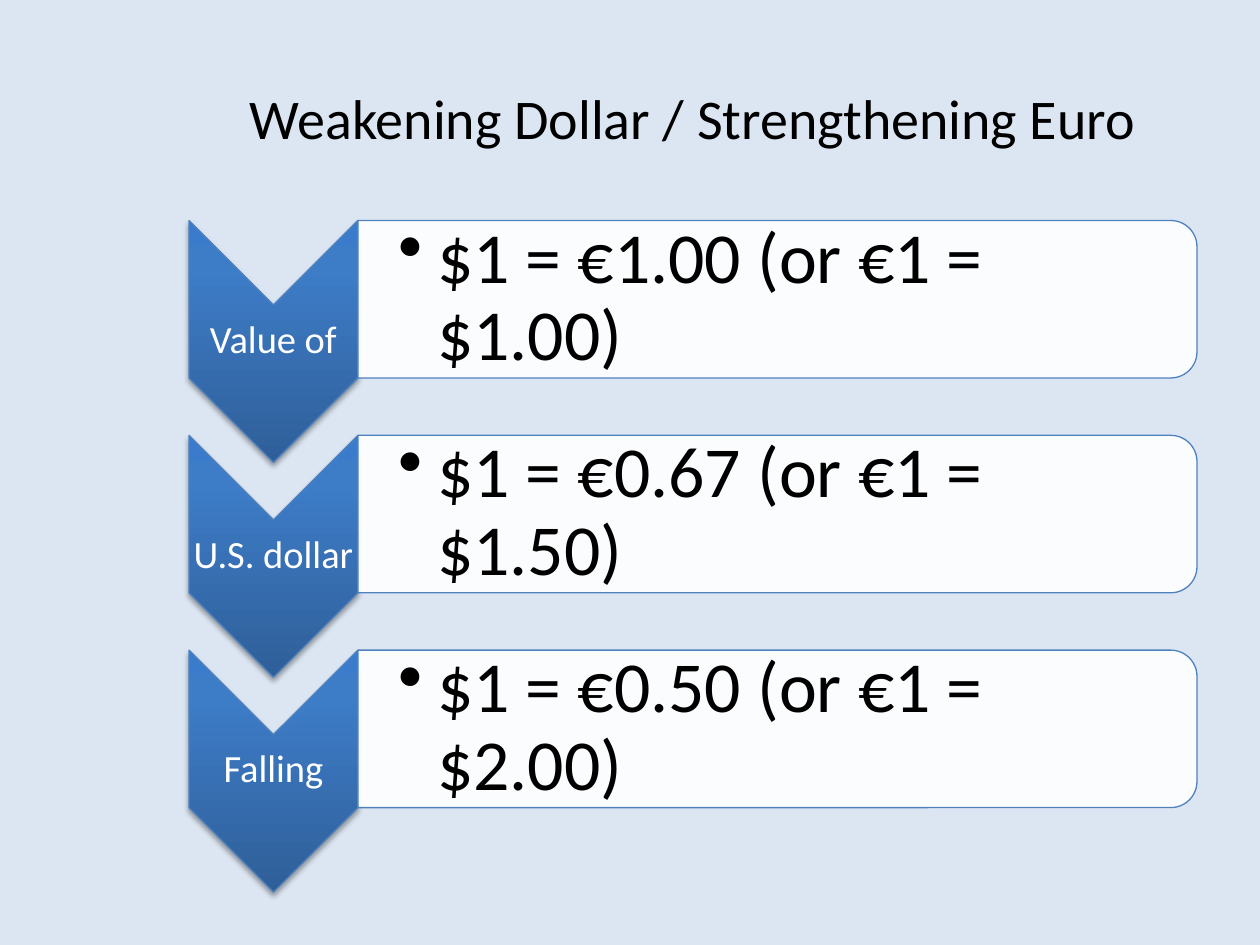
"""Build a slide that shows the dollar weakening against the euro in three steps."""
from dataclasses import dataclass

from pptx import Presentation
from pptx.dml.color import RGBColor
from pptx.enum.shapes import MSO_SHAPE as Kind
from pptx.enum.text import MSO_ANCHOR as Anchor, PP_ALIGN as Align
from pptx.oxml import parse_xml
from pptx.oxml.ns import nsdecls, qn
from pptx.util import Inches, Pt

FONT = "Calibri"
BLUE = "4F81BD"
STOPS = ((0, "2F5F99"), (80, "3D7CC7"), (100, "3A7CCB"))
TOP = 1.75
PITCH = 3.41 / 2
LEFT, MID, RIGHT = 1.5, 2.84, 9.5
TIP, BAR = 1.92, 1.25


@dataclass
class Step:
    label: str
    rate: str


@dataclass
class Box:
    left: float
    top: float
    width: float
    height: float

    def lengths(self):
        return [Inches(n) for n in (self.left, self.top, self.width, self.height)]

    def turned(self):
        shift = (self.width - self.height) / 2
        return Box(self.left + shift, self.top - shift, self.height, self.width)


STEPS = [
    Step("Value of", "$1 = €1.00 (or €1 = $1.00)"),
    Step("U.S. dollar", "$1 = €0.67 (or €1 = $1.50)"),
    Step("Falling", "$1 = €0.50 (or €1 = $2.00)"),
]


def color(code: str) -> RGBColor:
    return RGBColor.from_string(code)


def add_text(slide, box: Box, text: str, size: float, code: str, pads=None):
    area = slide.shapes.add_textbox(*box.lengths())
    frame = area.text_frame
    frame.word_wrap = True
    frame.vertical_anchor = Anchor.MIDDLE
    if pads:
        (frame.margin_left, frame.margin_top,
         frame.margin_right, frame.margin_bottom) = [Inches(n) for n in pads]
    frame.text = text
    para = frame.paragraphs[0]
    para.alignment = Align.CENTER
    font = para.runs[0].font
    font.name, font.size = FONT, Pt(size)
    font.color.rgb = color(code)
    return para


def add_turned(slide, kind: Kind, box: Box):
    shape = slide.shapes.add_shape(kind, *box.turned().lengths())
    shape.rotation = 90
    shape.shadow.inherit = False
    shape.line.color.rgb = color(BLUE)
    shape.line.width = Pt(0.75)
    return shape


def add_arrow(slide, box: Box) -> None:
    shape = add_turned(slide, Kind.CHEVRON, box)
    props = shape._element.spPr
    stops = "".join(
        f'<a:gs pos="{pos * 1000}"><a:srgbClr val="{code}"/></a:gs>'
        for pos, code in STOPS)
    props.insert(2, parse_xml(
        f'<a:gradFill {nsdecls("a")} rotWithShape="0"><a:gsLst>{stops}</a:gsLst>'
        '<a:lin ang="16200000" scaled="0"/></a:gradFill>'))
    props.find(qn("a:effectLst")).append(parse_xml(
        f'<a:outerShdw {nsdecls("a")} blurRad="{Pt(3.1)}" dist="{Pt(1.8)}" '
        'dir="5400000" rotWithShape="0"><a:srgbClr val="000000">'
        '<a:alpha val="35000"/></a:srgbClr></a:outerShdw>'))


def add_panel(slide, box: Box) -> None:
    shape = add_turned(slide, Kind.ROUND_2_SAME_RECTANGLE, box)
    shape.fill.solid()
    shape.fill.fore_color.rgb = color("FFFFFF")
    tint = shape._element.spPr.find(qn("a:solidFill"))[0]
    tint.append(parse_xml(f'<a:alpha {nsdecls("a")} val="90000"/>'))


def add_bullet(para) -> None:
    props = para._p.get_or_add_pPr()
    props.set("marL", str(Inches(0.31)))
    props.set("indent", str(Inches(-0.31)))
    props.append(parse_xml(f'<a:buChar {nsdecls("a")} char="•"/>'))


def add_step(slide, step: Step, top: float) -> None:
    wide = MID - LEFT
    add_arrow(slide, Box(LEFT, top, wide, TIP))
    label = add_text(slide, Box(LEFT, top + wide / 2, wide, 0.57), step.label,
                     22, "FFFFFF", [0.02] * 4)
    label.line_spacing = 0.9
    add_panel(slide, Box(MID, top, RIGHT - MID, BAR))
    rate = add_text(slide, Box(MID, top + 0.06, 6.6, 1.12), step.rate,
                    41, "000000", [0.32, 0.03, 0.2, 0.03])
    rate.alignment = Align.LEFT
    rate.level = 1
    rate.line_spacing = 0.9
    add_bullet(rate)


def main() -> None:
    deck = Presentation()
    deck.slide_width, deck.slide_height = Inches(10), Inches(7.5)
    slide = deck.slides.add_slide(deck.slide_layouts[6])
    back = slide.background.fill
    back.solid()
    back.fore_color.rgb = color("DCE6F2")
    add_text(slide, Box(LEFT, 0.3, 8, 1.26),
             "Weakening Dollar / Strengthening Euro", 32, "000000")
    for row, step in enumerate(STEPS):
        add_step(slide, step, TOP + row * PITCH)
    deck.save("out.pptx")


if __name__ == "__main__":
    main()
